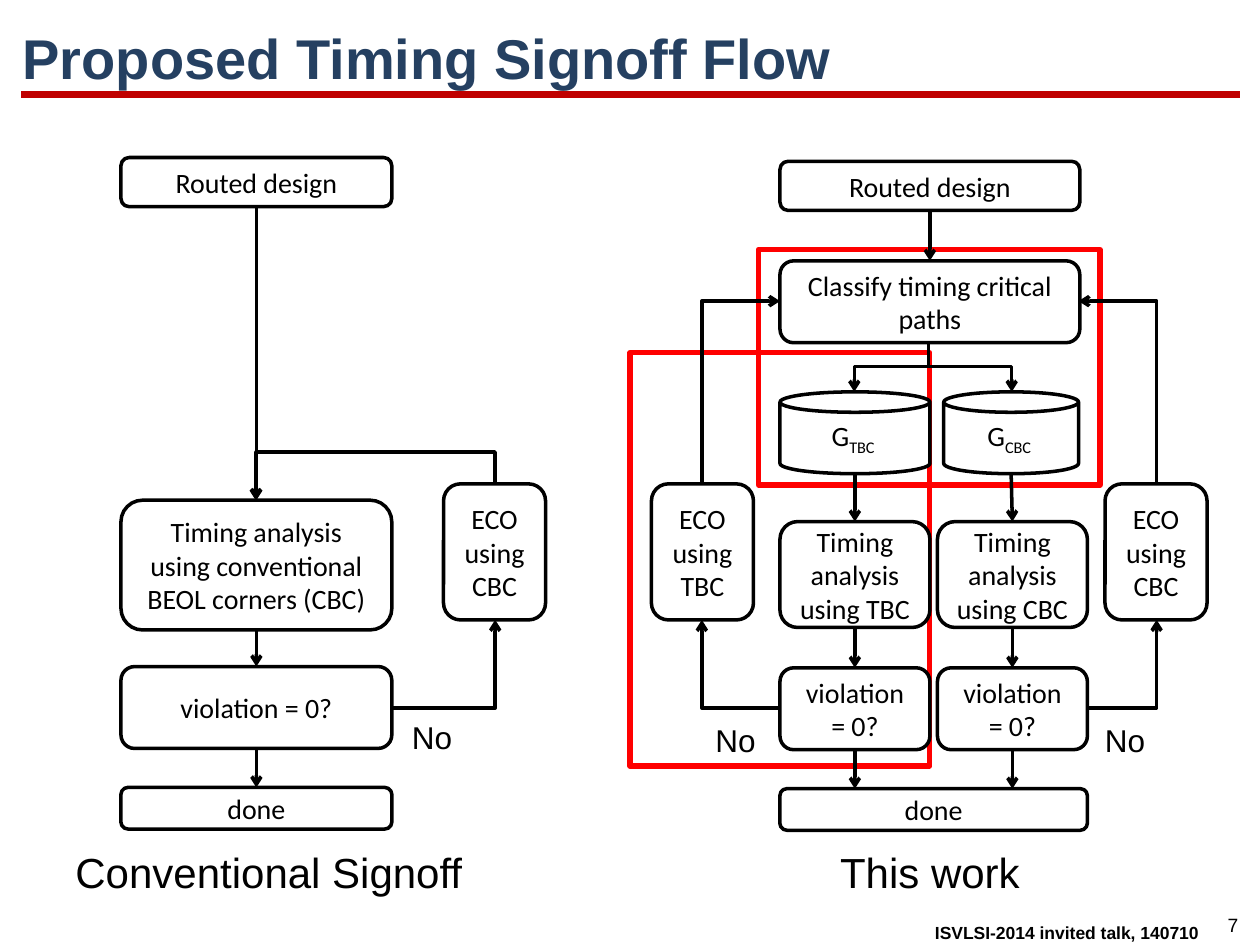
"""Build the slide comparing conventional and proposed timing signoff flows."""
from lxml import etree
from pptx import Presentation
from pptx.dml.color import RGBColor
from pptx.enum.shapes import MSO_CONNECTOR, MSO_SHAPE
from pptx.enum.text import MSO_ANCHOR, PP_ALIGN
from pptx.oxml.ns import qn
from pptx.util import Inches, Pt

LEFT, CENTER, RIGHT = PP_ALIGN.LEFT, PP_ALIGN.CENTER, PP_ALIGN.RIGHT
MIDDLE, TOP = MSO_ANCHOR.MIDDLE, MSO_ANCHOR.TOP
STRAIGHT, ELBOW = MSO_CONNECTOR.STRAIGHT, MSO_CONNECTOR.ELBOW
ROUNDED, CAN, RECTANGLE = MSO_SHAPE.ROUNDED_RECTANGLE, MSO_SHAPE.CAN, MSO_SHAPE.RECTANGLE
TOP_SIDE, BOTTOM_SIDE = 0, 2
COLORS = {"ink": "000000", "paper": "FFFFFF", "title": "254061", "rule": "C00000", "frame": "FF0000"}


class FlowSlide:
    """Hold the style and the slide, and draw each kind of element."""

    def __init__(self, slide):
        self.slide = slide
        self.shapes = slide.shapes

    def color(self, name):
        return RGBColor.from_string(COLORS[name])

    def add_run(self, paragraph, text, size, font, bold=False, color="ink"):
        run = paragraph.add_run()
        run.text = text
        run.font.size, run.font.name, run.font.bold = Pt(size), font, bold
        run.font.color.rgb = self.color(color)
        return run

    def title(self, text, left, top, width, height):
        shape = self.shapes.title
        shape.left, shape.top = Inches(left), Inches(top)
        shape.width, shape.height = Inches(width), Inches(height)
        shape.text_frame.vertical_anchor = MIDDLE
        paragraph = shape.text_frame.paragraphs[0]
        paragraph.alignment = LEFT
        self.add_run(paragraph, text, 32, "Arial", True, "title")

    def label(self, text, left, top, width, height, size, align=LEFT, bold=False):
        shape = self.shapes.add_textbox(Inches(left), Inches(top), Inches(width), Inches(height))
        shape.text_frame.word_wrap = True
        shape.text_frame.vertical_anchor = TOP
        paragraph = shape.text_frame.paragraphs[0]
        paragraph.alignment = align
        self.add_run(paragraph, text, size, "Arial", bold)

    def outline(self, kind, left, top, width, height, color="ink", weight=2):
        shape = self.shapes.add_shape(kind, Inches(left), Inches(top), Inches(width), Inches(height))
        shape.shadow.inherit = False
        shape.line.color.rgb = self.color(color)
        shape.line.width = Pt(weight)
        return shape

    def frame(self, left, top, width, height):
        self.outline(RECTANGLE, left, top, width, height, "frame", 3).fill.background()

    def box(self, lines, left, top, width, height, kind=ROUNDED, subscript=""):
        shape = self.outline(kind, left, top, width, height)
        shape.fill.solid()
        shape.fill.fore_color.rgb = self.color("paper")
        text_frame = shape.text_frame
        text_frame.word_wrap = True
        text_frame.vertical_anchor = MIDDLE
        for index, line in enumerate(lines):
            paragraph = text_frame.add_paragraph() if index else text_frame.paragraphs[0]
            paragraph.alignment = CENTER
            self.add_run(paragraph, line, 16, "Calibri")
        if subscript:
            run = self.add_run(paragraph, subscript, 16, "Calibri")
            run.font._element.set("baseline", "-25000")
        return shape

    def connector(self, kind, begin, end, color="ink", weight=2, arrow=True):
        connector = self.shapes.add_connector(kind, *begin, *end)
        connector.line.color.rgb = self.color(color)
        connector.line.width = Pt(weight)
        properties = connector._element.spPr
        if arrow:
            etree.SubElement(properties.find(qn("a:ln")), qn("a:tailEnd"), type="arrow")
        etree.SubElement(properties, qn("a:effectLst"))
        return connector

    def rule(self, left, right, y):
        self.connector(STRAIGHT, (Inches(left), Inches(y)), (Inches(right), Inches(y)), "rule", 4.5, False)

    def down(self, upper, lower, join_upper=True, join_lower=True):
        x = upper.left + upper.width // 2
        connector = self.connector(STRAIGHT, (x, upper.top + upper.height), (x, lower.top))
        if join_upper:
            connector.begin_connect(upper, BOTTOM_SIDE)
        if join_lower:
            connector.end_connect(lower, TOP_SIDE)

    def elbow(self, begin, end, turn, bend=None):
        """Draw a bent arrow whose first leg is horizontal before a clockwise turn."""
        across, along = end[0] - begin[0], end[1] - begin[1]
        width, height = {0: (across, along), 90: (along, -across),
                         180: (-across, -along), 270: (-along, across)}[turn]
        x, y = (begin[0] + end[0]) / 2, (begin[1] + end[1]) / 2
        connector = self.connector(
            ELBOW,
            (Inches(x - width / 2), Inches(y - height / 2)),
            (Inches(x + width / 2), Inches(y + height / 2)))
        properties = connector._element.spPr
        properties.find(qn("a:xfrm")).set("rot", str(turn * 60000))
        geometry = properties.find(qn("a:prstGeom"))
        if bend is None:
            geometry.set("prst", "bentConnector2")
        else:
            guides = geometry.find(qn("a:avLst"))
            etree.SubElement(guides, qn("a:gd"), name="adj1", fmla=f"val {round(bend * 100000)}")


def draw_conventional(flow):
    """Draw the flow on the left."""
    left, width, middle, eco_middle = 0.96, 2.15, 2.03, 3.93
    routed = flow.box(["Routed design"], left, 1.25, width, 0.39)
    timing = flow.box(["Timing analysis using conventional BEOL corners (CBC)"], left, 3.97, width, 1.03)
    flow.box(["ECO", "using CBC"], 3.52, 3.84, 0.81, 1.08)
    violation = flow.box(["violation = 0?"], left, 5.29, width, 0.65)
    done = flow.box(["done"], left, 6.25, width, 0.33)
    steps = [routed, timing, violation, done]
    for upper, lower in zip(steps, steps[1:]):
        flow.down(upper, lower)
    flow.elbow((eco_middle, 3.84), (middle, 3.97), 270, -1.95)
    flow.elbow((left + width, 5.62), (eco_middle, 4.92), 0)
    flow.label("No", 3.17, 5.65, 0.58, 0.3, 18)
    flow.label("Conventional Signoff", 0.5, 6.67, 3.42, 0.5, 24)


def draw_proposed(flow):
    """Draw the flow on the right."""
    left, width, right = 6.19, 2.38, 8.56
    flow.frame(6.02, 1.98, 2.71, 1.87)
    flow.frame(5, 2.8, 2.38, 3.28)
    routed = flow.box(["Routed design"], left, 1.28, width, 0.39)
    classify = flow.box(["Classify timing critical paths"], left, 2.07, width, 0.65)
    flow.down(routed, classify)
    done = flow.box(["done"], left, 6.26, 2.44, 0.33)
    branches = [
        ("TBC", left, left, 1.19, 6.78, 90),
        ("CBC", 7.44, 7.49, 1.07, 8.03, 270),
    ]
    for corner, box_left, can_left, can_width, middle, turn in branches:
        group = flow.box(["G"], can_left, 3.11, can_width, 0.65, CAN, f"{corner} ")
        timing = flow.box([f"Timing analysis using {corner}"], box_left, 4.14, 1.19, 0.84)
        violation = flow.box(["violation = 0?"], box_left, 5.3, 1.19, 0.65)
        flow.elbow((7.37, 2.71), (middle, 3.11), turn, 0.5)
        flow.down(group, timing, join_upper=False)
        flow.down(timing, violation)
        flow.down(violation, done, join_lower=False)
    repairs = [
        ("TBC", 5.17, 5.57, left, left, 90, 180, 5.58),
        ("CBC", 8.77, 9.18, 8.62, right, 270, 0, 8.67),
    ]
    for corner, box_left, middle, start, finish, turn_up, turn_out, no_left in repairs:
        flow.box(["ECO", f"using {corner}"], box_left, 3.84, 0.81, 1.08)
        flow.elbow((start, 5.62), (middle, 4.92), turn_out)
        flow.elbow((middle, 3.84), (finish, 2.39), turn_up)
        flow.label("No", no_left, 5.67, 0.58, 0.3, 18)
    flow.label("This work", 5.67, 6.67, 3.42, 0.5, 24, CENTER)


def main():
    """Build and save the presentation."""
    presentation = Presentation()
    presentation.slide_width, presentation.slide_height = Inches(10), Inches(7.5)
    flow = FlowSlide(presentation.slides.add_slide(presentation.slide_layouts[5]))
    flow.label("7", 9.59, 7.2, 0.39, 0.29, 11, CENTER)
    flow.label("ISVLSI-2014 invited talk, 140710", 6.93, 7.27, 2.68, 0.27, 10, RIGHT, True)
    flow.rule(0.17, 9.84, 0.75)
    flow.title("Proposed Timing Signoff Flow", 0.08, 0.14, 9.92, 0.62)
    draw_conventional(flow)
    draw_proposed(flow)
    presentation.save("out.pptx")


if __name__ == "__main__":
    main()
